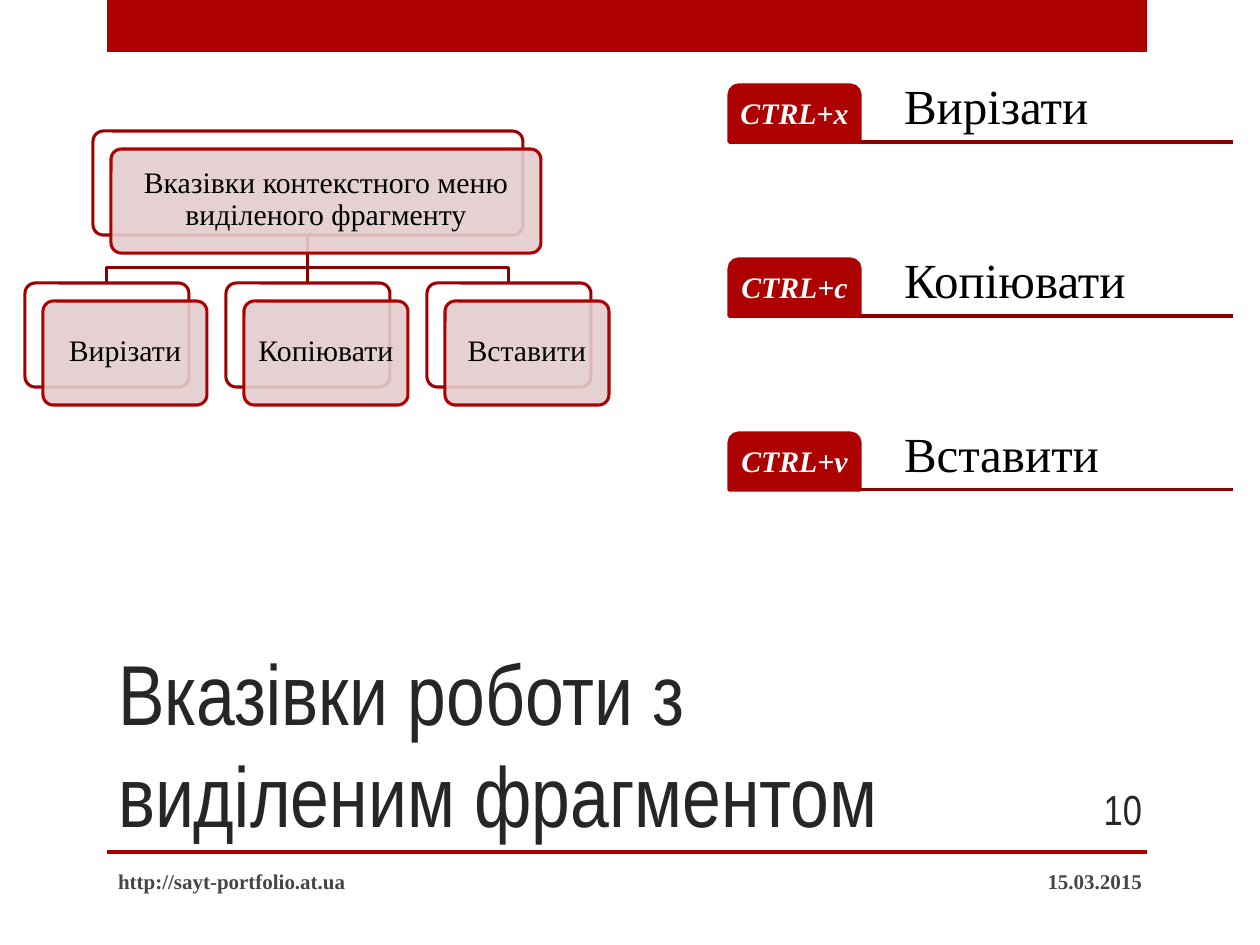
from dataclasses import dataclass

from lxml.etree import SubElement
from pptx import Presentation
from pptx.dml.color import RGBColor
from pptx.enum.shapes import MSO_CONNECTOR, MSO_SHAPE
from pptx.enum.text import MSO_ANCHOR as Anchor, MSO_AUTO_SIZE, PP_ALIGN as Align
from pptx.oxml.ns import qn
from pptx.util import Pt

PX = 914400 / 126
SERIF = "Times New Roman"
NARROW = "Arial Narrow"
LINE_WIDTH = 1.75
COLORS = {
    "red": "AD0101",
    "branch": "8B0101",
    "back_edge": "9D0101",
    "node": "E3CCCC",
    "white": "FFFFFF",
    "black": "000000",
    "title": "262626",
    "footer": "454545",
}


@dataclass(frozen=True)
class Box:
    left: int
    top: int
    width: int
    height: int

    def shifted(self, distance: int) -> "Box":
        return Box(self.left + distance, self.top + distance, self.width, self.height)

    @property
    def center(self) -> int:
        return self.left + self.width // 2

    @property
    def bottom(self) -> int:
        return self.top + self.height

    def emu(self) -> list[int]:
        return [emu(value) for value in (self.left, self.top, self.width, self.height)]


@dataclass(frozen=True)
class Shortcut:
    keys: str
    action: str


@dataclass(frozen=True)
class Node:
    text: str
    box: Box


SHORTCUTS = [
    Shortcut("CTRL+x", "Вирізати"),
    Shortcut("CTRL+c", "Копіювати"),
    Shortcut("CTRL+v", "Вставити"),
]
ROOT = Node("Вказівки контекстного меню виділеного фрагменту", Box(93, 131, 430, 104))
CHILDREN = [
    Node(shortcut.action, Box(25 + 201 * index, 283, 164, 104))
    for index, shortcut in enumerate(SHORTCUTS)
]


def emu(pixels: int) -> int:
    return round(pixels * PX)


def color(name: str) -> RGBColor:
    return RGBColor.from_string(COLORS[name])


def write(shape, text: str, *, size: float, ink: str, font: str = SERIF,
          align=Align.LEFT, anchor=Anchor.MIDDLE, bold: bool = False,
          italic: bool = False, spacing: float = 1.0,
          insets: tuple[int, int, int, int] = (13, 6, 13, 6)) -> None:
    frame = shape.text_frame
    frame.word_wrap = True
    frame.auto_size = MSO_AUTO_SIZE.NONE
    frame.vertical_anchor = anchor
    frame.margin_left, frame.margin_top, frame.margin_right, frame.margin_bottom = map(emu, insets)
    paragraph = frame.paragraphs[0]
    paragraph.alignment = align
    paragraph.line_spacing = spacing
    run = paragraph.add_run()
    run.text = text
    run.font.name = font
    run.font.size = Pt(size)
    run.font.bold = bold
    run.font.italic = italic
    run.font.color.rgb = color(ink)


def add_label(slide, box: Box, text: str, **style) -> None:
    write(slide.shapes.add_textbox(*box.emu()), text, **style)


def add_box(slide, box: Box, fill: str, *, kind=MSO_SHAPE.RECTANGLE,
            edge: str = "", corner: float = 0, opacity: int = 100):
    shape = slide.shapes.add_shape(kind, *box.emu())
    shape.shadow.inherit = False
    shape.fill.solid()
    shape.fill.fore_color.rgb = color(fill)
    if opacity < 100:
        fill_color = shape.fill._xPr.find(qn("a:solidFill"))[0]
        SubElement(fill_color, qn("a:alpha"), val=str(opacity * 1000))
    if edge:
        shape.line.color.rgb = color(edge)
        shape.line.width = Pt(LINE_WIDTH)
    else:
        shape.line.fill.background()
    if corner:
        shape.adjustments[0] = corner
    return shape


def add_branch(slide, parent: Box, child: Box) -> None:
    bend = child.top - 15
    points = [(parent.center, bend), (child.center, bend), (child.center, child.top)]
    if parent.center == child.center:
        points = points[-1:]
    builder = slide.shapes.build_freeform(emu(parent.center), emu(parent.bottom))
    builder.add_line_segments([(emu(x), emu(y)) for x, y in points], close=False)
    shape = builder.convert_to_shape()
    shape.shadow.inherit = False
    shape.fill.background()
    shape.line.color.rgb = color("branch")
    shape.line.width = Pt(LINE_WIDTH)


def add_node(slide, node: Node) -> None:
    rounded = MSO_SHAPE.ROUNDED_RECTANGLE
    add_box(slide, node.box, "white", kind=rounded, edge="back_edge", corner=0.1)
    front = add_box(slide, node.box.shifted(18), "node", kind=rounded,
                    edge="red", corner=0.1, opacity=90)
    write(front, node.text, size=17, ink="black", align=Align.CENTER,
          spacing=0.9, insets=(4, 9, 4, 11))


def add_shortcut(slide, shortcut: Shortcut, top: int) -> None:
    tab = Box(729, top, 131, 57)
    line = slide.shapes.add_connector(
        MSO_CONNECTOR.STRAIGHT, emu(tab.left), emu(tab.bottom), emu(1233), emu(tab.bottom))
    line.line.color.rgb = color("branch")
    line.line.width = Pt(LINE_WIDTH)
    SubElement(line._element.spPr, qn("a:effectLst"))
    add_label(slide, Box(860, top, 373, 57), shortcut.action, size=28, ink="black",
              anchor=Anchor.BOTTOM, spacing=0.9, insets=(44, 7, 7, 7))
    shape = add_box(slide, tab, "red", kind=MSO_SHAPE.ROUND_2_SAME_RECTANGLE,
                    edge="red", corner=0.167)
    write(shape, shortcut.keys, size=17, ink="white", align=Align.CENTER,
          bold=True, italic=True, spacing=0.9, insets=(4, 6, 4, 6))


def main() -> None:
    presentation = Presentation()
    presentation.slide_width = emu(1260)
    presentation.slide_height = emu(945)
    slide = presentation.slides.add_slide(presentation.slide_layouts[5])

    add_box(slide, Box(107, 0, 1040, 52), "red")
    add_box(slide, Box(107, 850, 1040, 4), "red")

    title = slide.shapes.title
    title.left, title.top, title.width, title.height = Box(105, 631, 935, 220).emu()
    write(title, "Вказівки роботи з виділеним фрагментом", size=48.6, ink="title",
          font=NARROW, anchor=Anchor.BOTTOM)

    for index, shortcut in enumerate(SHORTCUTS):
        add_shortcut(slide, shortcut, 85 + 174 * index)

    add_label(slide, Box(861, 856, 294, 50), "15.03.2015", size=12, ink="footer",
              bold=True, align=Align.RIGHT)
    add_label(slide, Box(105, 856, 672, 50), "http://sayt-portfolio.at.ua", size=12,
              ink="footer", bold=True)
    add_label(slide, Box(1050, 784, 105, 50), "10", size=24, ink="title", font=NARROW,
              align=Align.RIGHT)

    for child in CHILDREN:
        add_branch(slide, ROOT.box, child.box)
    for node in [ROOT, *CHILDREN]:
        add_node(slide, node)

    presentation.save("out.pptx")


if __name__ == "__main__":
    main()
